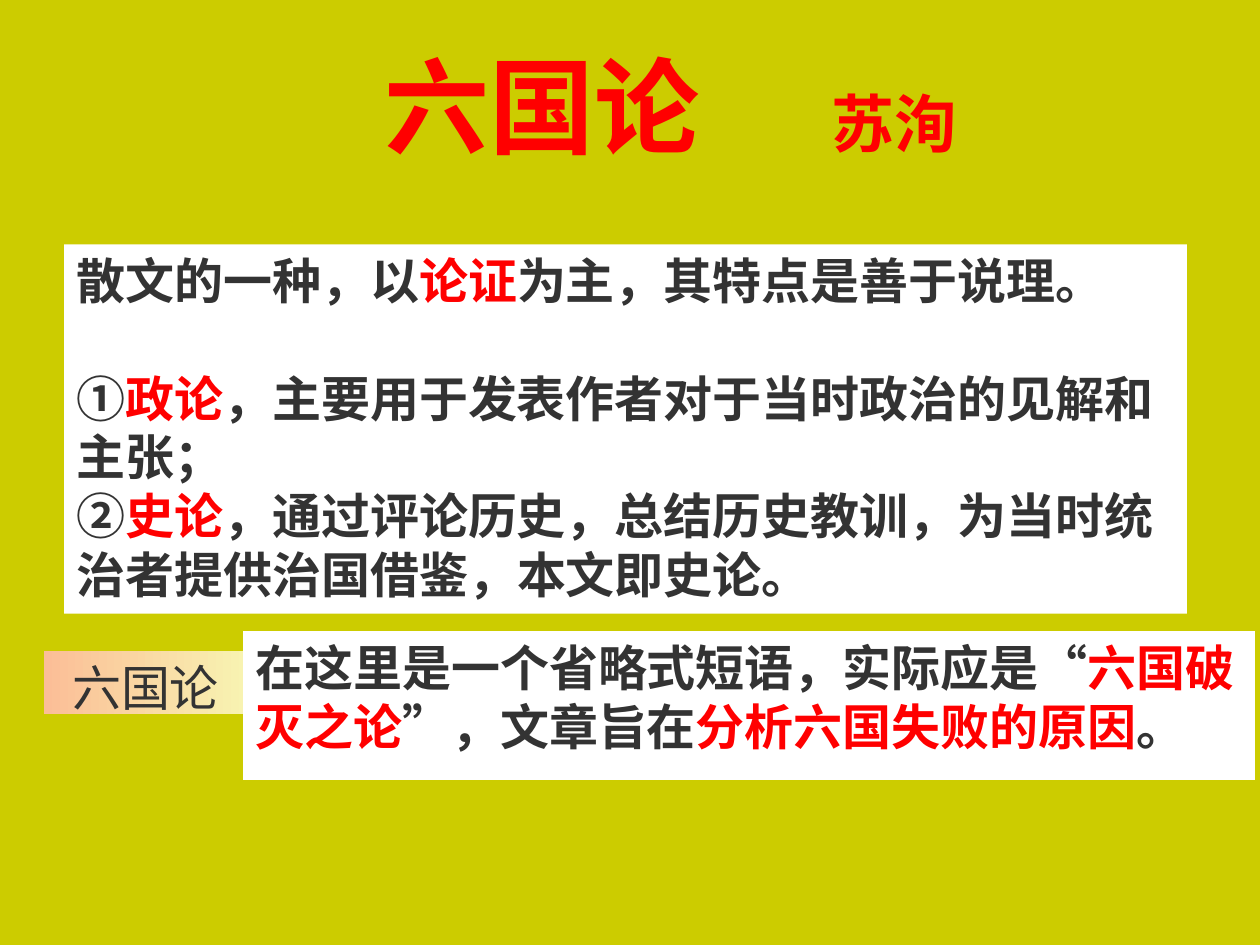
from pptx import Presentation
from pptx.dml.color import RGBColor
from pptx.enum.lang import MSO_LANGUAGE_ID as Lang
from pptx.enum.shapes import MSO_SHAPE as Shape
from pptx.enum.text import MSO_ANCHOR as Anchor, MSO_AUTO_SIZE as Fit, PP_ALIGN as Align
from pptx.util import Inches, Pt

RED, DARK, WHITE = "FF0000", "333333", "FFFFFF"
BACK, PEACH, CREAM = "CCCC00", "FBBE97", "F8F3B1"

# Content: each paragraph is a list of runs, with key words in *stars*
TITLE = ["*六国论*"]
AUTHOR = ["*苏洵*"]
GENRE = [
    "散文的一种，以*论证*为主，其特点是善于说理。",
    "①*政论*，主要用于发表作者对于当时政治的见解和主张；",
    "②*史论*，通过评论历史，总结历史教训，为当时统治者提供治国借鉴，本文即史论。",
]
LABEL = ["六国论"]
MEANING = ["在这里是一个省略式短语，实际应是“*六国破灭之论*”，文章旨在*分析六国失败的原因*。"]

# Places: left, top, width, height in inches
PLACES = {
    "title": (2.95, 0.28, 3.54, 1.1),
    "author": (6.5, 0.62, 2.44, 0.7),
    "genre": (0.51, 1.94, 8.91, 2.93),
    "label": (0.35, 5.17, 1.61, 0.5),
    "meaning": (1.93, 5.01, 8.03, 1.18),
}
FRAME = {"word_wrap": True, "auto_size": Fit.NONE, "vertical_anchor": Anchor.TOP}


def color(code):
    return RGBColor.from_string(code)


def box(name):
    return [Inches(n) for n in PLACES[name]]


def write(shape, lines, size=28, bold=True, align=Align.LEFT):
    frame = shape.text_frame
    for key, val in FRAME.items():
        setattr(frame, key, val)
    for i, line in enumerate(lines):
        para = frame.add_paragraph() if i else frame.paragraphs[0]
        para.alignment = align
        for j, part in enumerate(line.split("*")):
            if not part:
                continue
            run = para.add_run()
            run.text = part
            look = {"name": "Times New Roman", "size": Pt(size), "bold": bold,
                    "language_id": Lang.SIMPLIFIED_CHINESE}
            for key, val in look.items():
                setattr(run.font, key, val)
            run.font.color.rgb = color(RED if j % 2 else DARK)


def panel(slide, name):
    shape = slide.shapes.add_shape(Shape.RECTANGLE, *box(name))
    shape.shadow.inherit = False
    shape.line.fill.background()
    shape.fill.solid()
    shape.fill.fore_color.rgb = color(WHITE)
    return shape


def main():
    prs = Presentation()
    prs.slide_width, prs.slide_height = Inches(10), Inches(7.5)
    slide = prs.slides.add_slide(prs.slide_layouts[5])
    slide.background.fill.solid()
    slide.background.fill.fore_color.rgb = color(BACK)

    # Heading and author
    head = slide.shapes.title
    head.left, head.top, head.width, head.height = box("title")
    write(head, TITLE, 60)
    write(slide.shapes.add_textbox(*box("author")), AUTHOR, 36)

    # Genre panel, with a one-line gap after the definition
    genre = panel(slide, "genre")
    write(genre, GENRE)
    genre.text_frame.paragraphs[1].space_before = Pt(33.5)

    # Label with a left-to-right gradient
    label = panel(slide, "label")
    label.fill.gradient()
    label.fill.gradient_angle = 0
    for stop, pos, code in zip(label.fill.gradient_stops, (0, 1), (PEACH, CREAM)):
        stop.position = pos
        stop.color.rgb = color(code)
    write(label, LABEL, bold=False, align=Align.CENTER)

    # Meaning of the title
    write(panel(slide, "meaning"), MEANING)

    prs.save("out.pptx")


if __name__ == "__main__":
    main()
